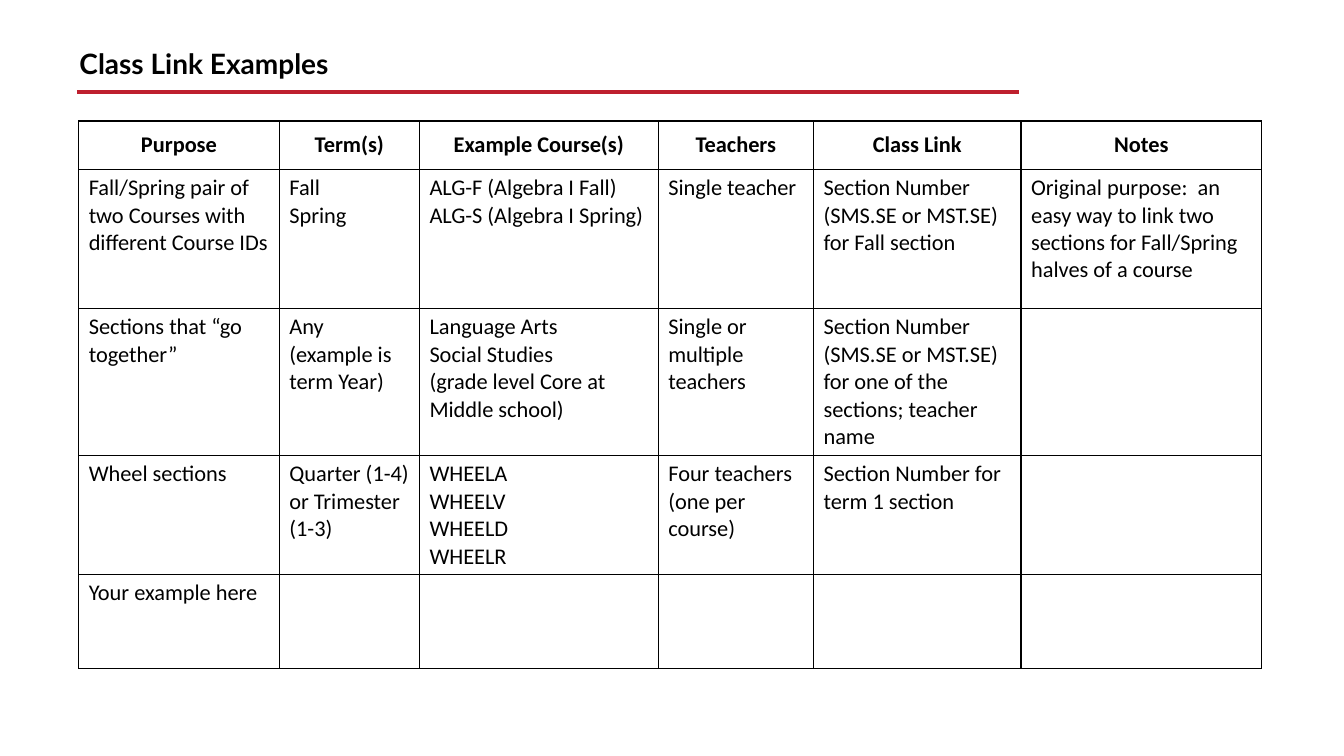
import pptx
import pptx.util
import pptx.dml.color
import pptx.enum.shapes
import pptx.enum.text
import pptx.oxml
import pptx.oxml.ns
import lxml.etree

Pt = pptx.util.Pt


def color(code):
    return pptx.dml.color.RGBColor.from_string(code)


deck = pptx.Presentation()
deck.slide_width = Pt(960)
deck.slide_height = Pt(540)
slide = deck.slides.add_slide(deck.slide_layouts[6])

title = slide.shapes.add_textbox(Pt(49.7), Pt(32.4), Pt(851), Pt(33.8))
title.text_frame.word_wrap = True
title.text_frame.vertical_anchor = pptx.enum.text.MSO_ANCHOR.TOP
line = title.text_frame.paragraphs[0]
line.text = "Class Link Examples"
line.line_spacing = 0.9
line.font.name = "Lato"
line.font.size = Pt(20)
line.font.bold = True
line.font.color.rgb = color("000000")

rule = slide.shapes.add_connector(
    pptx.enum.shapes.MSO_CONNECTOR.STRAIGHT, Pt(54.9), Pt(65.6), Pt(728), Pt(65.6))
rule.line.color.rgb = color("BE202E")
rule.line.width = Pt(3)
lxml.etree.SubElement(rule.element.spPr, pptx.oxml.ns.qn("a:effectLst"))

rows = [
    ["Purpose", "Term(s)", "Example Course(s)", "Teachers", "Class Link", "Notes"],
    ["Fall/Spring pair of two Courses with different Course IDs",
     "Fall\nSpring",
     "ALG-F (Algebra I Fall)\nALG-S (Algebra I Spring)",
     "Single teacher",
     "Section Number (SMS.SE or MST.SE) for Fall section",
     "Original purpose:  an easy way to link two sections for Fall/Spring halves of a course"],
    ["Sections that “go together”",
     "Any (example is term Year)",
     "Language Arts\nSocial Studies\n(grade level Core at Middle school)",
     "Single or multiple teachers",
     "Section Number (SMS.SE or MST.SE) for one of the sections; teacher name",
     ""],
    ["Wheel sections",
     "Quarter (1-4)\nor Trimester (1-3)",
     "WHEELA\nWHEELV\nWHEELD\nWHEELR",
     "Four teachers (one per course)",
     "Section Number for term 1 section",
     ""],
    ["Your example here", "", "", "", "", ""],
]
widths = [143.3, 100.1, 170.6, 110.9, 148.3, 171.8]
heights = [34.6, 99.4, 105, 85, 67]

frame = slide.shapes.add_table(
    len(rows), len(widths), Pt(56.2), Pt(86.4), Pt(sum(widths)), Pt(sum(heights)))
table = frame.table
table.first_row = False
table.horz_banding = False
for col, width in zip(table.columns, widths):
    col.width = Pt(width)

for r, texts in enumerate(rows):
    table.rows[r].height = Pt(heights[r])
    head = r == 0
    for c, text in enumerate(texts):
        cell = table.cell(r, c)
        cell.text = text
        cell.vertical_anchor = (
            pptx.enum.text.MSO_ANCHOR.MIDDLE if head else pptx.enum.text.MSO_ANCHOR.TOP)
        for para in cell.text_frame.paragraphs:
            para.font.name = "Calibri"
            para.font.size = Pt(16)
            para.font.bold = head
            para.font.color.rgb = color("000000")
            if head:
                para.alignment = pptx.enum.text.PP_ALIGN.CENTER
        props = cell._tc.get_or_add_tcPr()
        for side in ("lnL", "lnR", "lnT", "lnB"):
            props.append(pptx.oxml.parse_xml(
                f'<a:{side} {pptx.oxml.ns.nsdecls("a")} w="{Pt(1)}"><a:solidFill>'
                f'<a:srgbClr val="000000"/></a:solidFill></a:{side}>'))
        cell.fill.solid()
        cell.fill.fore_color.rgb = color("FFFFFF")

deck.save("out.pptx")
